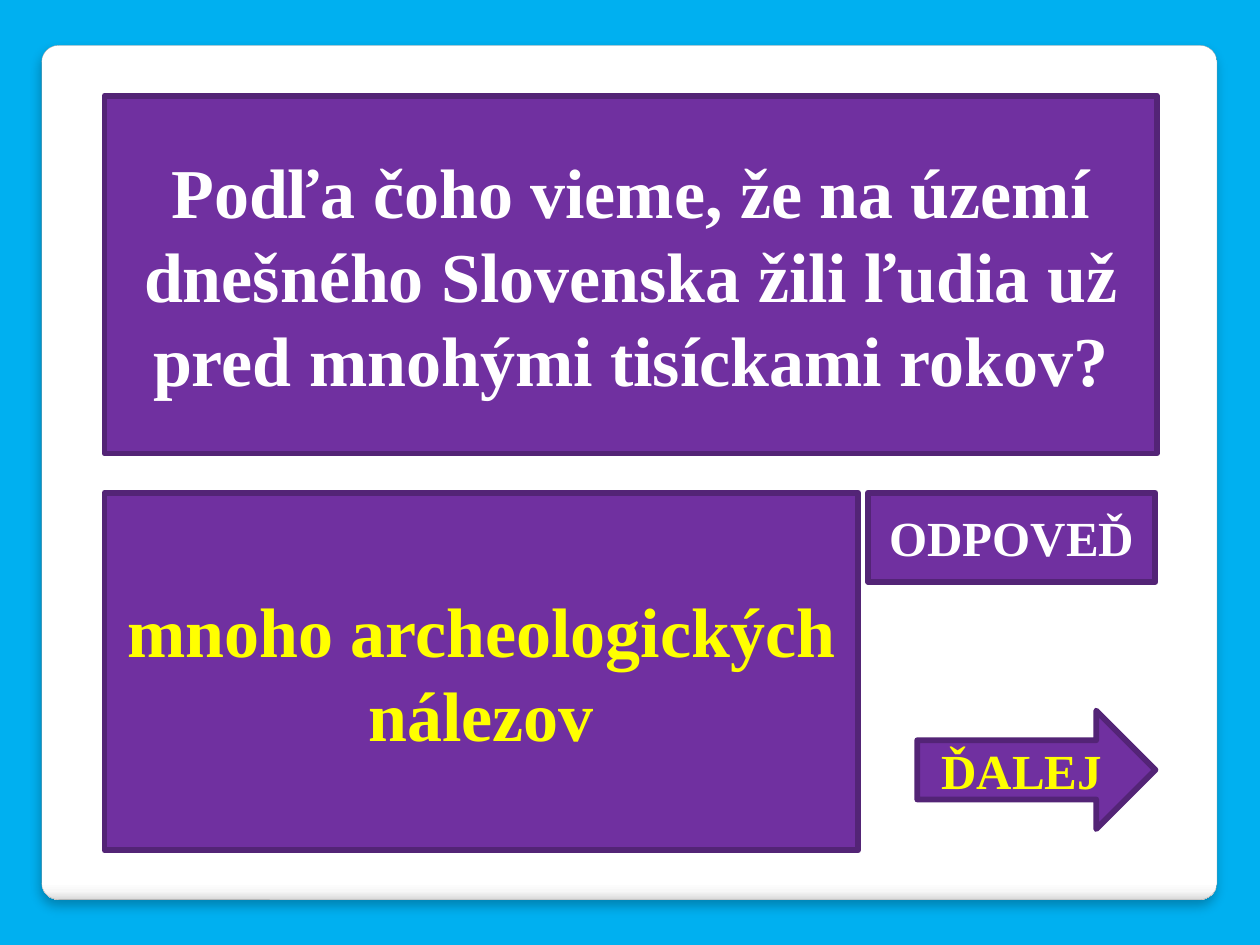
from lxml.etree import SubElement
from pptx import Presentation
from pptx.dml.color import RGBColor
from pptx.enum.shapes import MSO_SHAPE
from pptx.enum.text import MSO_ANCHOR, PP_ALIGN
from pptx.oxml.ns import qn
from pptx.util import Inches, Pt

FONT = "Times New Roman"
SKY, WHITE, YELLOW = "00B0F0", "FFFFFF", "FFFF00"
PURPLE, PLUM, GREY = "7030A0", "532476", "A4A4A4"
STOPS = [(0, WHITE), (98, WHITE), (99, "F7F7F7"), (100, "DADADA")]


def color(code):
    """Turn a hex string into a colour."""
    return RGBColor.from_string(code)


def add_node(parent, tag, **attrs):
    """Append an XML child with the given attributes."""
    return SubElement(parent, qn(tag), {k: str(v) for k, v in attrs.items()})


def add_shape(slide, kind, box, edge, width):
    """Add an outlined shape without a shadow."""
    shape = slide.shapes.add_shape(kind, *map(Inches, box))
    shape.shadow.inherit = False
    shape.line.color.rgb = color(edge)
    shape.line.width = Pt(width)
    return shape


def add_panel(slide):
    """Add the white rounded panel with its shaded foot and soft shadow."""
    panel = add_shape(slide, MSO_SHAPE.ROUNDED_RECTANGLE,
                      (0.33, 0.36, 9.33, 6.78), GREY, 0.16)
    panel.adjustments[0] = 0.02
    panel.fill.gradient()
    panel.fill.gradient_angle = 270
    props = panel._element.spPr
    stops = props.find(".//" + qn("a:gsLst"))
    stops.clear()
    for place, code in STOPS:
        stop = add_node(stops, "a:gs", pos=place * 1000)
        add_node(stop, "a:srgbClr", val=code)
    shade = add_node(props.find(qn("a:effectLst")), "a:outerShdw",
                     blurRad=Pt(6), dist=Pt(4), dir=90 * 60000,
                     algn="tl", rotWithShape=0)
    add_node(add_node(shade, "a:srgbClr", val="000000"), "a:alpha", val=25000)


def add_label(slide, kind, box, text, size, ink):
    """Add a purple shape with bold centred text."""
    shape = add_shape(slide, kind, box, PLUM, 3.35)
    shape.fill.solid()
    shape.fill.fore_color.rgb = color(PURPLE)
    frame = shape.text_frame
    frame.word_wrap = True
    frame.vertical_anchor = MSO_ANCHOR.MIDDLE
    para = frame.paragraphs[0]
    para.alignment = PP_ALIGN.CENTER
    run = para.add_run()
    run.text = text
    run.font.color.rgb = color(ink)
    for name, value in {"name": FONT, "size": Pt(size), "bold": True}.items():
        setattr(run.font, name, value)


def main():
    """Build the quiz slide and save it."""
    deck = Presentation()
    deck.slide_width, deck.slide_height = Inches(10), Inches(7.5)
    slide = deck.slides.add_slide(deck.slide_layouts[6])
    back = slide.background.fill
    back.solid()
    back.fore_color.rgb = color(SKY)
    add_panel(slide)
    rect, arrow = MSO_SHAPE.RECTANGLE, MSO_SHAPE.RIGHT_ARROW
    labels = [
        (rect, (0.83, 0.76, 8.35, 2.84),
         "Podľa čoho vieme, že na území dnešného Slovenska žili ľudia už "
         "pred mnohými tisíckami rokov?", 40, WHITE),
        (rect, (0.83, 3.91, 5.98, 2.84),
         "mnoho archeologických nálezov", 40, YELLOW),
        (rect, (6.89, 3.91, 2.28, 0.71), "ODPOVEĎ", 28, WHITE),
        (arrow, (7.28, 5.64, 1.89, 0.94), "ĎALEJ", 28, YELLOW),
    ]
    for label in labels:
        add_label(slide, *label)
    deck.save("out.pptx")


if __name__ == "__main__":
    main()
